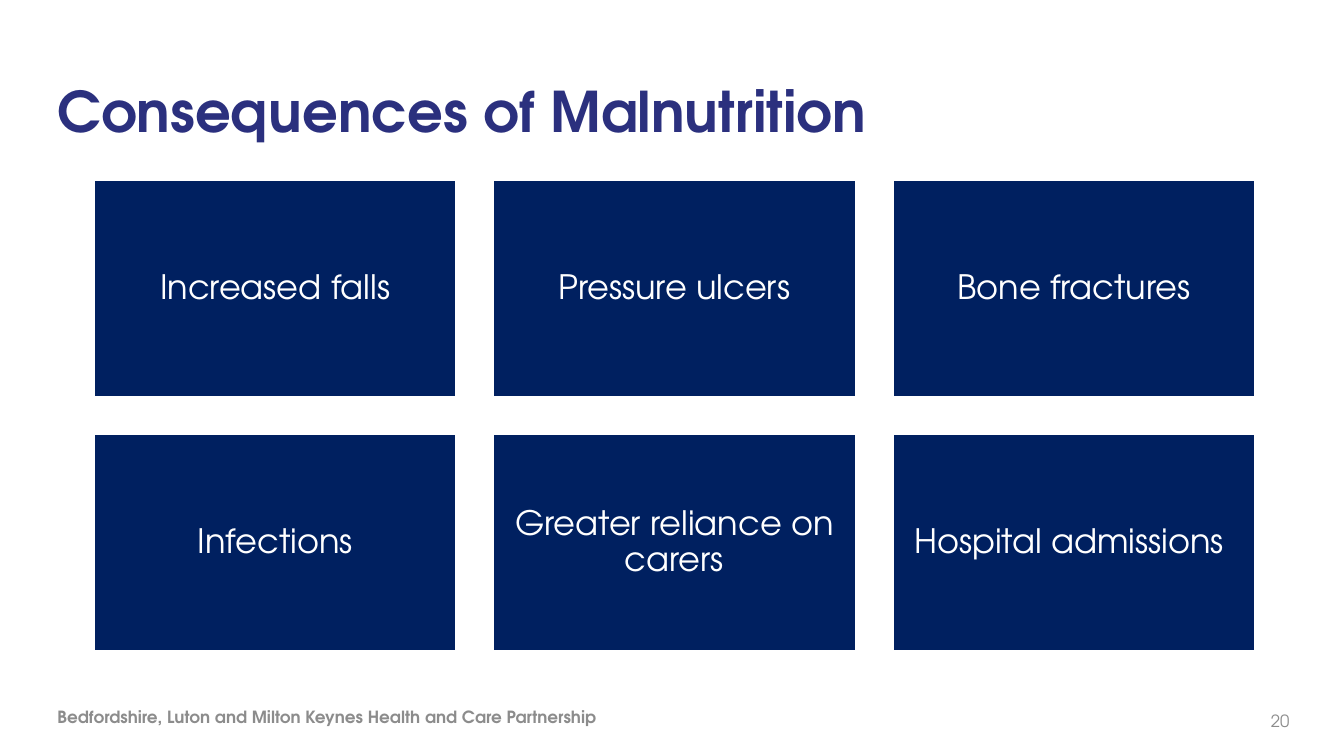
from pptx import Presentation
from pptx.dml.color import RGBColor
from pptx.enum.shapes import MSO_SHAPE as Shape
from pptx.enum.text import MSO_ANCHOR as Anchor, MSO_AUTO_SIZE as AutoSize, PP_ALIGN as Align
from pptx.util import Inches, Pt

FONT = "TeX Gyre Adventor"
INDIGO = RGBColor(0x2B, 0x30, 0x7E)
NAVY = RGBColor(0x00, 0x20, 0x60)
GREY = RGBColor(0x8C, 0x8C, 0x8C)
WHITE = RGBColor(0xFF, 0xFF, 0xFF)

CONSEQUENCES = [
    "Increased falls", "Pressure ulcers", "Bone fractures",
    "Infections", "Greater reliance on carers", "Hospital admissions ",
]
COLUMNS = 3
CARD_W, CARD_H = 3.6, 2.16
GRID_LEFT, GRID_TOP = 0.93, 1.78
GAP = 0.36


class SlideBuilder:
    def __init__(self, prs):
        self.s = prs.slides.add_slide(prs.slide_layouts[5])

    def add_text(self, sp, text, size, color, bold=False, align=Align.LEFT, inset=0):
        tf = sp.text_frame
        tf.word_wrap = True
        tf.auto_size = AutoSize.NONE
        tf.vertical_anchor = Anchor.MIDDLE
        tf.margin_left = tf.margin_right = Inches(inset)
        tf.margin_top = tf.margin_bottom = Inches(inset)
        p = tf.paragraphs[0]
        p.alignment = align
        r = p.add_run()
        r.text = text
        r.font.name = FONT
        r.font.size = Pt(size)
        r.font.bold = bold
        r.font.color.rgb = color
        return p

    def title(self, text, left, top, width, height):
        sp = self.s.shapes.title
        sp.left, sp.top = Inches(left), Inches(top)
        sp.width, sp.height = Inches(width), Inches(height)
        self.add_text(sp, text, 40, INDIGO, bold=True)

    def footer(self, text, left, top, width, bold=False, align=Align.LEFT):
        sp = self.s.shapes.add_textbox(Inches(left), Inches(top), Inches(width), Inches(0.4))
        p = self.add_text(sp, text, 12, GREY, bold, align)
        p.space_after = Pt(6)

    def card(self, text, left, top):
        sp = self.s.shapes.add_shape(
            Shape.RECTANGLE, Inches(left), Inches(top), Inches(CARD_W), Inches(CARD_H))
        sp.shadow.inherit = False
        sp.fill.solid()
        sp.fill.fore_color.rgb = NAVY
        sp.line.color.rgb = WHITE
        sp.line.width = Pt(2)
        p = self.add_text(sp, text, 24, WHITE, align=Align.CENTER, inset=0.1)
        p.line_spacing = 0.9


def main():
    prs = Presentation()
    prs.slide_width, prs.slide_height = Inches(13.33), Inches(7.5)
    slide = SlideBuilder(prs)
    slide.title("Consequences of Malnutrition", 0.57, 0.42, 9.64, 1.35)
    slide.footer("Bedfordshire, Luton and Milton Keynes Health and Care Partnership",
                 0.57, 6.91, 8.1, bold=True)
    slide.footer("20", 12.26, 6.95, 0.53, align=Align.RIGHT)
    for i, consequence in enumerate(CONSEQUENCES):
        row, col = divmod(i, COLUMNS)
        slide.card(consequence, GRID_LEFT + col * (CARD_W + GAP), GRID_TOP + row * (CARD_H + GAP))
    prs.save("out.pptx")


if __name__ == "__main__":
    main()
